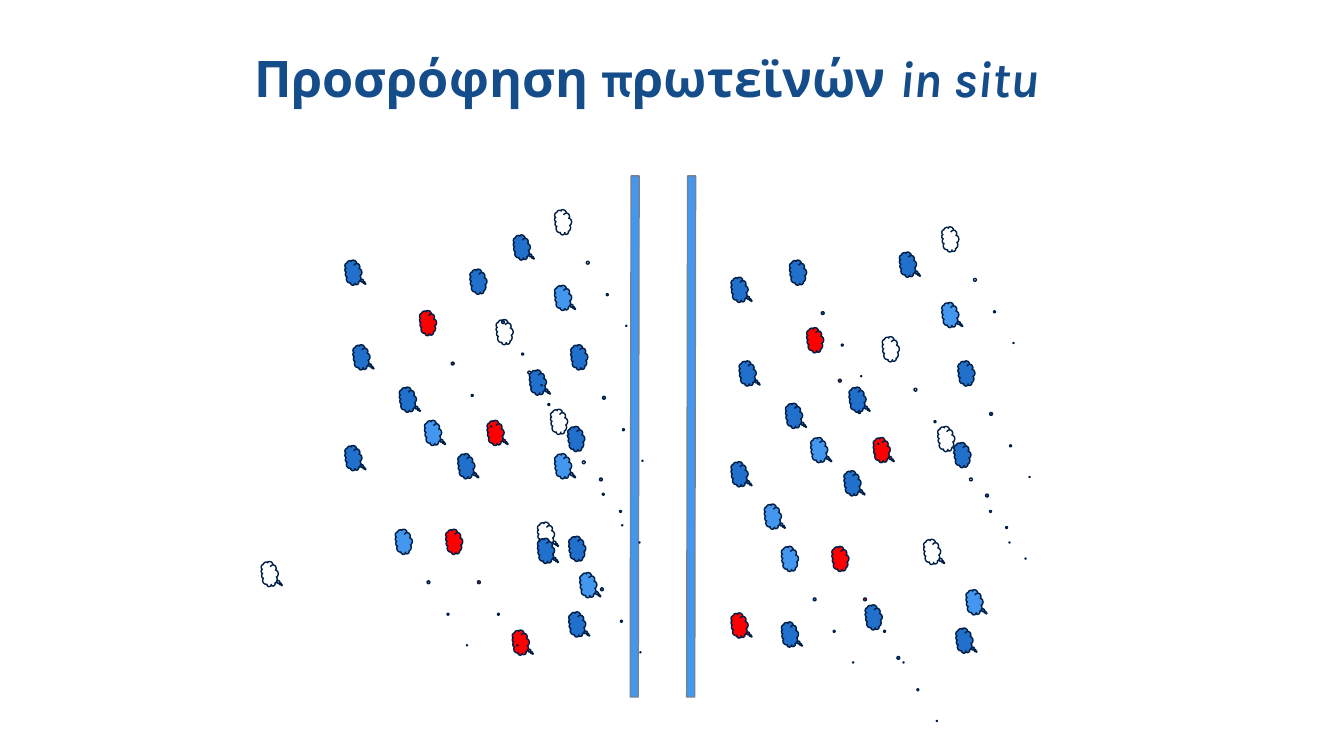
from pptx import Presentation
from pptx.dml.color import RGBColor
from pptx.enum.shapes import MSO_SHAPE
from pptx.enum.text import MSO_ANCHOR, MSO_AUTO_SIZE, PP_ALIGN
from pptx.util import Inches, Pt

CLOUD = MSO_SHAPE.CLOUD_CALLOUT
RECT = MSO_SHAPE.RECTANGLE
MIDDLE = MSO_ANCHOR.MIDDLE
LEFT = PP_ALIGN.LEFT
FIXED = MSO_AUTO_SIZE.NONE

TITLE = [("Προσρόφηση πρωτεϊνών ", False), ("in situ", True)]
WHITE, BLUE, SKY, RED = "FFFFFF", "2170CC", "4397EE", "FF0000"
NAVY, GREY, INK = "001F46", "748394", "154C8A"
TURN = 270.1
NEAR = (-0.438, 0.7)
FAR = (-4.104, 3.698)

BARS = [(3.71, 4.29), (4.27, 4.29)]
BAR = (5.17, 0.08)
CELL = (0.25, 0.17)

PROTEINS = [
    (WHITE, NEAR, [(2.55, 5.61), (5.29, 5.22), (9.12, 5.39)]),
    (WHITE, FAR, [
        (5.42, 4.1), (4.88, 3.21), (5.46, 2.12),
        (9.26, 4.27), (8.71, 3.38), (9.3, 2.29)]),
    (SKY, NEAR, [
        (5.71, 5.72), (5.46, 4.54), (4.17, 4.21), (5.46, 2.87),
        (9.54, 5.89), (7.54, 5.04), (8, 4.38), (9.3, 3.04)]),
    (SKY, FAR, [(3.88, 5.29), (7.71, 5.46)]),
    (RED, NEAR, [(5.04, 6.29), (4.79, 4.21), (7.21, 6.12), (8.62, 4.38)]),
    (RED, FAR, [(4.38, 5.29), (4.12, 3.12), (8.21, 5.46), (7.96, 3.29)]),
    (BLUE, NEAR, [
        (5.6, 6.11), (3.38, 2.62), (3.46, 3.46), (3.38, 4.46),
        (5.29, 5.38), (3.92, 3.88), (4.5, 4.54), (5.21, 3.71),
        (5.05, 2.37), (9.44, 6.27), (7.21, 2.79), (7.29, 3.62),
        (7.21, 4.62), (7.71, 6.21), (7.75, 4.04), (8.33, 4.71),
        (8.38, 3.88), (8.88, 2.54)]),
    (BLUE, FAR, [
        (5.6, 5.36), (4.62, 2.71), (5.59, 4.27), (5.62, 3.46),
        (8.54, 6.04), (7.79, 2.62), (9.42, 4.43), (9.46, 3.62)]),
]


def color(code):
    return RGBColor.from_string(code)


def draw(home, kind, spot, size, fill, edge):
    shape = home.add_shape(kind, *map(Inches, spot + size))
    shape.rotation = TURN
    shape.shadow.inherit = False
    shape.fill.solid()
    shape.fill.fore_color.rgb = color(fill)
    shape.line.color.rgb = color(edge)
    shape.line.width = Pt(1)
    return shape


def head(title):
    title.left, title.top = Inches(2.52), Inches(0.1)
    title.width, title.height = Inches(8.25), Inches(1.42)
    frame = title.text_frame
    frame.auto_size = FIXED
    frame.vertical_anchor = MIDDLE
    frame.margin_left = frame.margin_right = 0
    frame.margin_top = frame.margin_bottom = 0
    line = frame.paragraphs[0]
    line.alignment = LEFT
    line.line_spacing = 0.9
    line.font.name = "Karla"
    line.font.size = Pt(36)
    line.font.bold = True
    line.font.color.rgb = color(INK)
    for text, slant in TITLE:
        run = line.add_run()
        run.text = text
        run.font.italic = slant


def main():
    deck = Presentation()
    deck.slide_width, deck.slide_height = Inches(13.33), Inches(7.5)
    slide = deck.slides.add_slide(deck.slide_layouts[5])
    head(slide.shapes.title)
    wall = slide.shapes.add_group_shape()
    for spot in BARS:
        draw(wall.shapes, RECT, spot, BAR, SKY, GREY)
    for fill, tail, spots in PROTEINS:
        for spot in spots:
            cell = draw(slide.shapes, CLOUD, spot, CELL, fill, NAVY)
            cell.adjustments[0], cell.adjustments[1] = tail
    deck.save("out.pptx")


if __name__ == "__main__":
    main()
